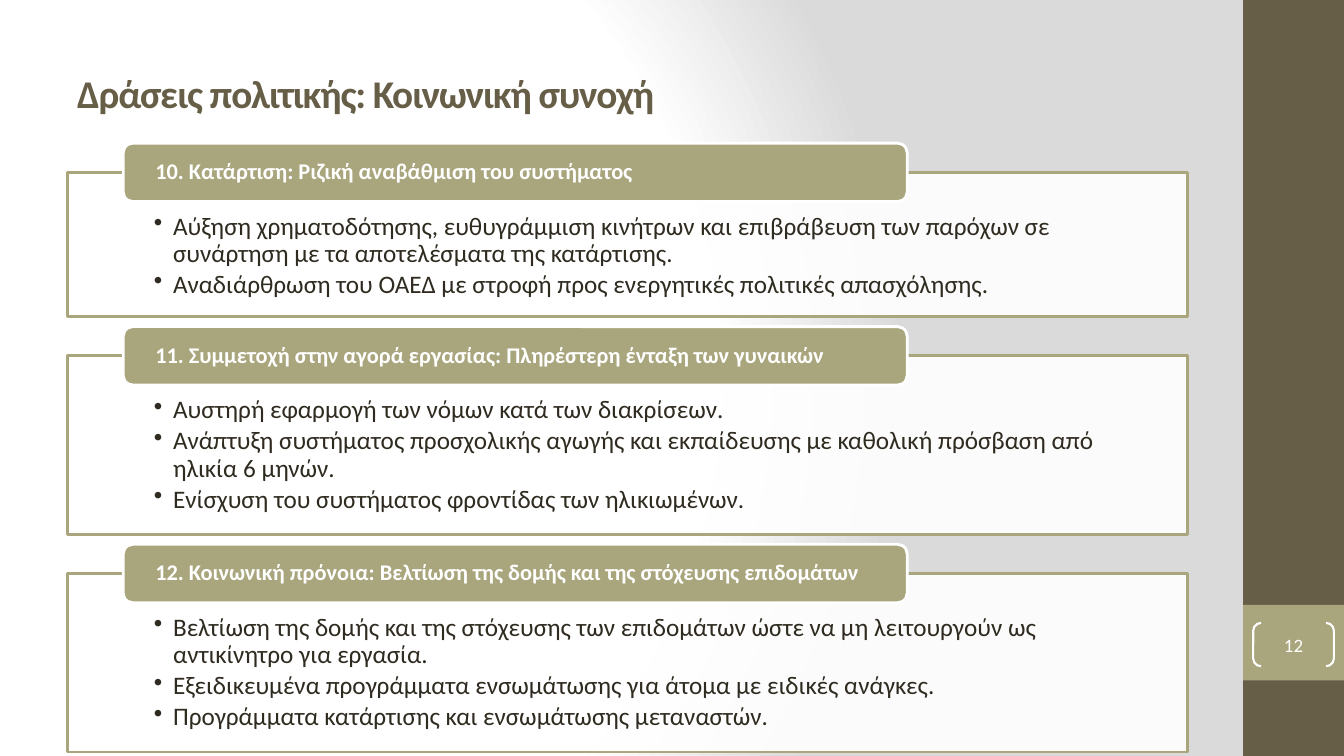
import pptx
import pptx.util
import pptx.oxml
import pptx.dml.color
import pptx.enum.shapes
import pptx.enum.text
from lxml import etree

TITLE = "Δράσεις πολιτικής: Κοινωνική συνοχή"
PAGE = "12"
CARDS = [
    ("10. Κατάρτιση: Ριζική αναβάθμιση του συστήματος", [
        "Αύξηση χρηματοδότησης, ευθυγράμμιση κινήτρων και επιβράβευση των παρόχων σε συνάρτηση με τα αποτελέσματα της κατάρτισης.",
        "Αναδιάρθρωση του ΟΑΕΔ με στροφή προς ενεργητικές πολιτικές απασχόλησης.",
    ]),
    ("11. Συμμετοχή στην αγορά εργασίας: Πληρέστερη ένταξη των γυναικών", [
        "Αυστηρή εφαρμογή των νόμων κατά των διακρίσεων.",
        "Ανάπτυξη συστήματος προσχολικής αγωγής και εκπαίδευσης με καθολική πρόσβαση από ηλικία 6 μηνών.",
        "Ενίσχυση του συστήματος φροντίδας των ηλικιωμένων.",
    ]),
    ("12. Κοινωνική πρόνοια: Βελτίωση της δομής και της στόχευσης επιδομάτων", [
        "Βελτίωση της δομής και της στόχευσης των επιδομάτων ώστε να μη λειτουργούν ως αντικίνητρο για εργασία.",
        "Εξειδικευμένα προγράμματα ενσωμάτωσης για άτομα με ειδικές ανάγκες.",
        "Προγράμματα κατάρτισης και ενσωμάτωσης μεταναστών.",
    ]),
]
COLORS = {"dark": "675E47", "olive": "A9A57C", "white": "FFFFFF", "text": "2F2B20", "grey": "DADADA"}
FONT = "Calibri"
NS = "http://schemas.openxmlformats.org/drawingml/2006/main"
A = "{%s}" % NS
NS_P = "http://schemas.openxmlformats.org/presentationml/2006/main"

W, H = 13.33, 7.5
BAND_W = 1
LEFT, BODY_W = W / 20, W / 1.2
TAB_LEFT, TAB_W, TAB_H = LEFT + BODY_W / 20, BODY_W * 0.7, 0.58
FIRST_TOP, GAP = 1.42, 0.1
BASE_H, BULLET_H = 0.75, 0.34

SHAPE = pptx.enum.shapes.MSO_SHAPE
ALIGN = pptx.enum.text.PP_ALIGN
ANCHOR = pptx.enum.text.MSO_ANCHOR
Inches, Pt = pptx.util.Inches, pptx.util.Pt


def rgb(name):
    return pptx.dml.color.RGBColor.from_string(COLORS[name])


def add_box(s, kind, box, fill=None, line=None, width=2):
    sp = s.shapes.add_shape(kind, *map(Inches, box))
    sp.shadow.inherit = False
    if fill:
        sp.fill.solid()
        sp.fill.fore_color.rgb = rgb(fill)
    else:
        sp.fill.background()
    if line:
        sp.line.color.rgb = rgb(line)
        sp.line.width = Pt(width)
    else:
        sp.line.fill.background()
    return sp


def write(sp, lines, size, color, bold=False, insets=(0.1, 0.05, 0.1, 0.05),
          anchor=ANCHOR.MIDDLE, align=ALIGN.LEFT, spacing=1, after=0):
    tf = sp.text_frame
    tf.word_wrap = True
    tf.vertical_anchor = anchor
    tf.margin_left, tf.margin_top, tf.margin_right, tf.margin_bottom = map(Inches, insets)
    tf.text = "\n".join(lines)
    for p in tf.paragraphs:
        p.alignment = align
        p.line_spacing = spacing
        p.space_after = Pt(after)
        p.font.name = FONT
        p.font.size = Pt(size)
        p.font.bold = bold
        p.font.color.rgb = rgb(color)
    return tf


def add_bullets(tf):
    for p in tf.paragraphs:
        pPr = p._p.get_or_add_pPr()
        pPr.set("marL", str(Inches(0.19)))
        pPr.set("indent", str(-Inches(0.19)))
        bullet = etree.Element(A + "buChar", char="•")
        pPr.find(A + "spcAft").addnext(bullet)


def set_background(s):
    stops = "".join(
        f'<a:gs pos="{pos}000"><a:srgbClr val="{COLORS[name]}"/></a:gs>'
        for pos, name in ((0, "white"), (75, "white"), (100, "grey")))
    bg = pptx.oxml.parse_xml(
        f'<p:bg xmlns:p="{NS_P}" xmlns:a="{NS}"><p:bgPr><a:gradFill rotWithShape="1">'
        f'<a:gsLst>{stops}</a:gsLst><a:path path="circle">'
        '<a:fillToRect l="20000" t="50000" r="100000" b="50000"/></a:path>'
        '</a:gradFill><a:effectLst/></p:bgPr></p:bg>')
    s.element.cSld.insert(0, bg)


def add_card(s, top, heading, bullets):
    height = BASE_H + BULLET_H * len(bullets)
    panel_top = top + TAB_H / 2
    panel = add_box(s, SHAPE.RECTANGLE, (LEFT, panel_top, BODY_W, height), "white", "olive")
    color = panel.fill._xPr.find(f"{A}solidFill/{A}srgbClr")
    etree.SubElement(color, A + "alpha", val="90000")
    tf = write(panel, bullets, 18, "text", insets=(0.86, 0.41, 0.86, 0.14),
               anchor=ANCHOR.TOP, spacing=0.9, after=2.7)
    add_bullets(tf)
    tab = add_box(s, SHAPE.ROUNDED_RECTANGLE, (TAB_LEFT, top, TAB_W, TAB_H), "olive", "white")
    write(tab, [heading], 16, "white", True, insets=(0.29, 0, 0.29, 0), spacing=0.9)
    return panel_top + height + GAP


def main():
    prs = pptx.Presentation()
    prs.slide_width, prs.slide_height = Inches(W), Inches(H)
    s = prs.slides.add_slide(prs.slide_layouts[6])
    set_background(s)
    band_left = W - BAND_W
    add_box(s, SHAPE.RECTANGLE, (band_left, 0, BAND_W, H), "dark")
    add_box(s, SHAPE.RECTANGLE, (band_left, H * 0.8, BAND_W, H / 10), "olive")

    title = s.shapes.add_textbox(*map(Inches, (LEFT, 0.3, BODY_W, 1.25)))
    tf = write(title, [TITLE], 28, "dark", True)
    tf.paragraphs[0].runs[0].font._element.set("spc", "-80")

    top = FIRST_TOP
    for heading, bullets in CARDS:
        top = add_card(s, top, heading, bullets)

    number = add_box(s, SHAPE.DOUBLE_BRACKET, (band_left + BAND_W / 10, 6.18, BAND_W * 0.8, 0.43),
                     line="white", width=1.5)
    number.adjustments[0] = 0.18
    write(number, [PAGE], 13.5, "white", insets=(0, 0, 0, 0), align=ALIGN.CENTER)
    prs.save("out.pptx")


if __name__ == "__main__":
    main()
